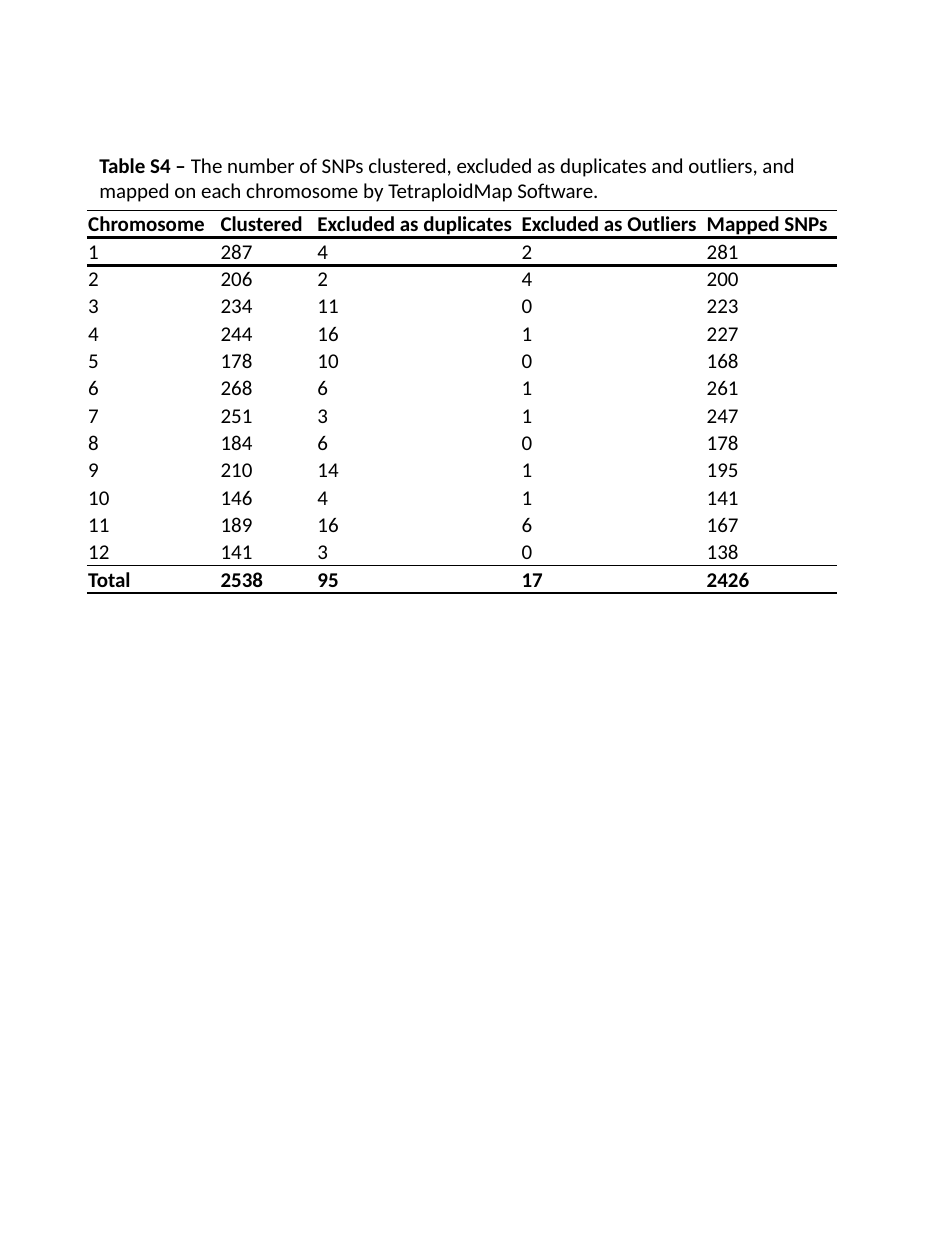
from dataclasses import dataclass

from lxml.etree import SubElement
from pptx import Presentation
from pptx.dml.color import RGBColor
from pptx.enum.text import MSO_ANCHOR, MSO_AUTO_SIZE
from pptx.oxml.ns import qn
from pptx.util import Inches, Pt


@dataclass(frozen=True)
class Theme:
    font: str = "Calibri"
    size: int = 12
    ink: str = "000000"
    thin: float = 0.5
    mid: float = 1
    thick: float = 2


@dataclass(frozen=True)
class Row:
    cells: tuple
    bold: bool = False
    top: float = 0
    base: float = 0


THEME = Theme()
PLAIN = "{2D5ABB26-0587-4C30-8999-92F81FD0307C}"  # no style, no grid
LEFT, TOP, TALL = 0.69, 1.67, 3.04
WIDTHS = (1.05, 0.77, 1.62, 1.47, 1.04)
HEADS = ("Chromosome", "Clustered", "Excluded as duplicates",
         "Excluded as Outliers", "Mapped SNPs")
COUNTS = (
    (287, 4, 2, 281), (206, 2, 4, 200), (234, 11, 0, 223),
    (244, 16, 1, 227), (178, 10, 0, 168), (268, 6, 1, 261),
    (251, 3, 1, 247), (184, 6, 0, 178), (210, 14, 1, 195),
    (146, 4, 1, 141), (189, 16, 6, 167), (141, 3, 0, 138),
)
TITLE = "Table S4 –"
NOTE = (" The number of SNPs clustered, excluded as duplicates and outliers, "
        "and mapped on each chromosome by TetraploidMap Software.")


def style(run, bold: bool) -> None:
    font = run.font
    font.name, font.size, font.bold = THEME.font, Pt(THEME.size), bold
    font.color.rgb = RGBColor.from_string(THEME.ink)


def rule(cell, side: str, width: float) -> None:
    """Draw a line along the top (T) or bottom (B) of a cell."""
    line = SubElement(cell._tc.get_or_add_tcPr(), qn(f"a:ln{side}"),
                      w=str(Pt(width)))
    fill = SubElement(line, qn("a:solidFill"))
    SubElement(fill, qn("a:srgbClr"), val=THEME.ink)


def fill_cell(cell, text: str, row: Row) -> None:
    cell.text_frame.text = text
    style(cell.text_frame.paragraphs[0].runs[0], row.bold)
    cell.vertical_anchor = MSO_ANCHOR.MIDDLE
    cell.margin_left = cell.margin_right = cell.margin_top = Inches(0.01)
    cell.margin_bottom = 0
    # Borders come before the fill in the cell's properties
    for side, width in (("T", row.top), ("B", row.base)):
        if width:
            rule(cell, side, width)
    cell.fill.background()


def make_rows() -> list[Row]:
    sums = [sum(column) for column in zip(*COUNTS)]
    last = len(COUNTS)
    body = [Row((num, *vals),
                top=THEME.thick if num == 1 else 0,
                base=THEME.thin if num == last else 0)
            for num, vals in enumerate(COUNTS, 1)]
    return [Row(HEADS, True, THEME.thin, THEME.thick), *body,
            Row(("Total", *sums), True, THEME.thin, THEME.mid)]


def add_grid(slide, rows: list[Row]) -> None:
    frame = slide.shapes.add_table(
        len(rows), len(WIDTHS), Inches(LEFT), Inches(TOP),
        Inches(sum(WIDTHS)), Inches(TALL))
    table = frame.table
    table.first_row = table.horz_banding = False
    table._tbl.tblPr.find(qn("a:tableStyleId")).text = PLAIN
    for column, width in zip(table.columns, WIDTHS):
        column.width = Inches(width)
    for line, row in zip(table.rows, rows):
        line.height = Inches(TALL / len(rows))
        for cell, value in zip(line.cells, row.cells):
            fill_cell(cell, str(value), row)


def add_title(slide) -> None:
    box = slide.shapes.add_textbox(
        Inches(LEFT), Inches(1.16), Inches(5.92), Inches(0.5))
    frame = box.text_frame
    frame.word_wrap = True
    frame.auto_size = MSO_AUTO_SIZE.SHAPE_TO_FIT_TEXT
    for text, bold in ((TITLE, True), (NOTE, False)):
        run = frame.paragraphs[0].add_run()
        run.text = text
        style(run, bold)


def main() -> None:
    deck = Presentation()
    deck.slide_width, deck.slide_height = Inches(7.5), Inches(10)
    slide = deck.slides.add_slide(deck.slide_layouts[6])
    # Table of counts
    add_grid(slide, make_rows())
    # Caption above the table
    add_title(slide)
    deck.save("out.pptx")


if __name__ == "__main__":
    main()
